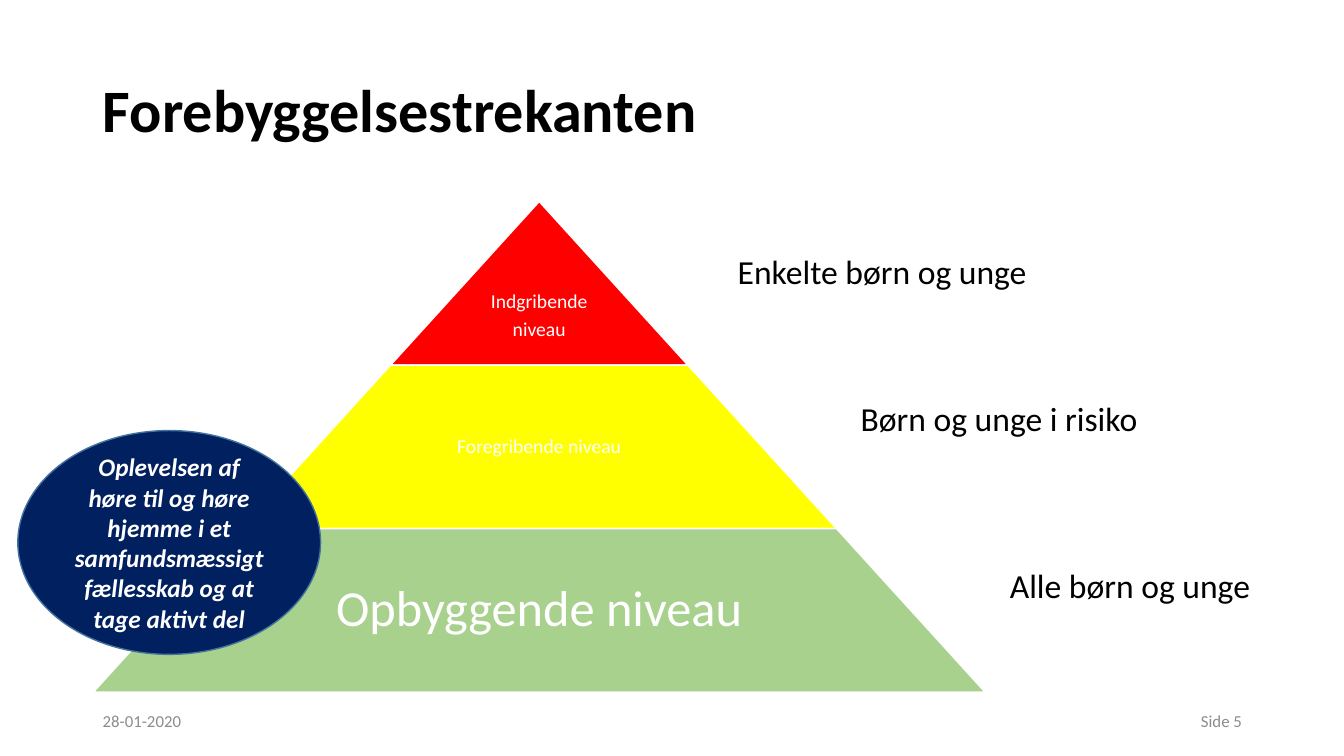
from pptx import Presentation
from pptx.dml.color import RGBColor
from pptx.enum import shapes, text
from pptx.util import Cm, Pt

FONT = "Calibri"
BLACK = RGBColor(0x00, 0x00, 0x00)
WHITE = RGBColor(0xFF, 0xFF, 0xFF)
GREY = RGBColor(0x8C, 0x8C, 0x8C)
RED = RGBColor(0xFF, 0x00, 0x00)
YELLOW = RGBColor(0xFF, 0xFF, 0x00)
GREEN = RGBColor(0xA9, 0xD1, 0x8E)
NAVY = RGBColor(0x00, 0x20, 0x60)
STEEL = RGBColor(0x43, 0x73, 0x9E)

LEFT, CENTER, RIGHT = (
    text.PP_ALIGN.LEFT, text.PP_ALIGN.CENTER, text.PP_ALIGN.RIGHT)

PYRAMID_CENTER, PYRAMID_TOP = 13.59, 5.08
TIER_HEIGHT, TIER_STEP = 4.12, 7.49

# lines, size, fill, vertical text offset, text margin
TIERS = [
    (["Indgribende", "niveau"], 14, RED, 0.82, 0.05),
    (["Foregribende niveau"], 14, YELLOW, 0, 0.05),
    (["Opbyggende niveau"], 36, GREEN, 0, 0.13),
]
# text, left, top, width
GROUP_LABELS = [
    ("Enkelte børn og unge", 18.34, 6.2, 7.87),
    ("Børn og unge i risiko", 21.44, 9.91, 7.54),
    ("Alle børn og unge", 25.2, 14.12, 6.63),
]


def write(shape, lines, size, color, align=LEFT, paragraph_format=None,
          frame_format=None, **font_format):
    """Fill a shape with one paragraph per line."""
    frame = shape.text_frame
    frame_values = {"word_wrap": True,
                    "vertical_anchor": text.MSO_ANCHOR.MIDDLE}
    for name, value in {**frame_values, **(frame_format or {})}.items():
        setattr(frame, name, value)
    font_values = {"name": FONT, "size": Pt(size), **font_format}
    for index, line in enumerate(lines):
        paragraph = frame.add_paragraph() if index else frame.paragraphs[0]
        paragraph.alignment = align
        for name, value in (paragraph_format or {}).items():
            setattr(paragraph, name, value)
        run = paragraph.add_run()
        run.text = line
        for name, value in font_values.items():
            setattr(run.font, name, value)
        run.font.color.rgb = color


def add_text(slide, box, *content, **formats):
    shape = slide.shapes.add_textbox(*(Cm(value) for value in box))
    write(shape, *content, **formats)


def add_filled_shape(slide, kind, box, fill, line):
    shape = slide.shapes.add_shape(kind, *(Cm(value) for value in box))
    shape.shadow.inherit = False
    shape.fill.solid()
    shape.fill.fore_color.rgb = fill
    shape.line.color.rgb = line
    shape.line.width = Pt(1)
    return shape


def add_title(slide, title_text):
    title = slide.shapes.title
    place = {"left": 2.34, "top": 1.02, "width": 29.21, "height": 3.68}
    for name, value in place.items():
        setattr(title, name, Cm(value))
    write(title, [title_text], 43, BLACK, bold=True,
          paragraph_format={"line_spacing": 0.9})


def add_pyramid(slide):
    for index, (lines, size, fill, offset, margin) in enumerate(TIERS):
        width = TIER_STEP * (index + 1)
        top = PYRAMID_TOP + TIER_HEIGHT * index
        box = (PYRAMID_CENTER - width / 2, top, width, TIER_HEIGHT)
        tier = add_filled_shape(
            slide, shapes.MSO_SHAPE.TRAPEZOID, box, fill, WHITE)
        tier.adjustments[0] = TIER_STEP / 2 / TIER_HEIGHT

        text_width = max(TIER_STEP, width * 0.65)
        text_box = (PYRAMID_CENTER - text_width / 2, top + offset,
                    text_width, TIER_HEIGHT)
        margins = {f"margin_{side}": Cm(margin)
                   for side in ("left", "top", "right", "bottom")}
        add_text(slide, text_box, lines, size, WHITE, CENTER,
                 frame_format=margins,
                 paragraph_format={"line_spacing": 0.9,
                                   "space_after": Pt(size * 0.35)})


def add_group_labels(slide):
    for label, left, top, width in GROUP_LABELS:
        add_text(slide, (left, top, width, 1.28), [label], 24, BLACK,
                 frame_format={
                     "word_wrap": False,
                     "auto_size": text.MSO_AUTO_SIZE.SHAPE_TO_FIT_TEXT,
                     "vertical_anchor": text.MSO_ANCHOR.TOP})


def add_belonging_bubble(slide):
    bubble = add_filled_shape(slide, shapes.MSO_SHAPE.OVAL,
                              (0.45, 10.85, 7.63, 5.64), NAVY, STEEL)
    write(bubble, ["Oplevelsen af høre til og høre hjemme i et "
                   "samfundsmæssigt fællesskab og at tage aktivt del"],
          18, WHITE, CENTER, bold=True, italic=True)


def add_footer(slide):
    for footer, left, align in (("28-01-2020", 2.34, LEFT),
                                ("Side 5", 23.93, RIGHT)):
        add_text(slide, (left, 17.65, 7.62, 1.02), [footer], 12, GREY, align)


def main():
    presentation = Presentation()
    presentation.slide_width = Cm(33.87)
    presentation.slide_height = Cm(19.05)
    title_only = presentation.slide_layouts.get_by_name("Title Only")
    slide = presentation.slides.add_slide(title_only)
    add_title(slide, "Forebyggelsestrekanten")
    add_footer(slide)
    add_group_labels(slide)
    add_pyramid(slide)
    add_belonging_bubble(slide)
    presentation.save("out.pptx")


if __name__ == "__main__":
    main()
